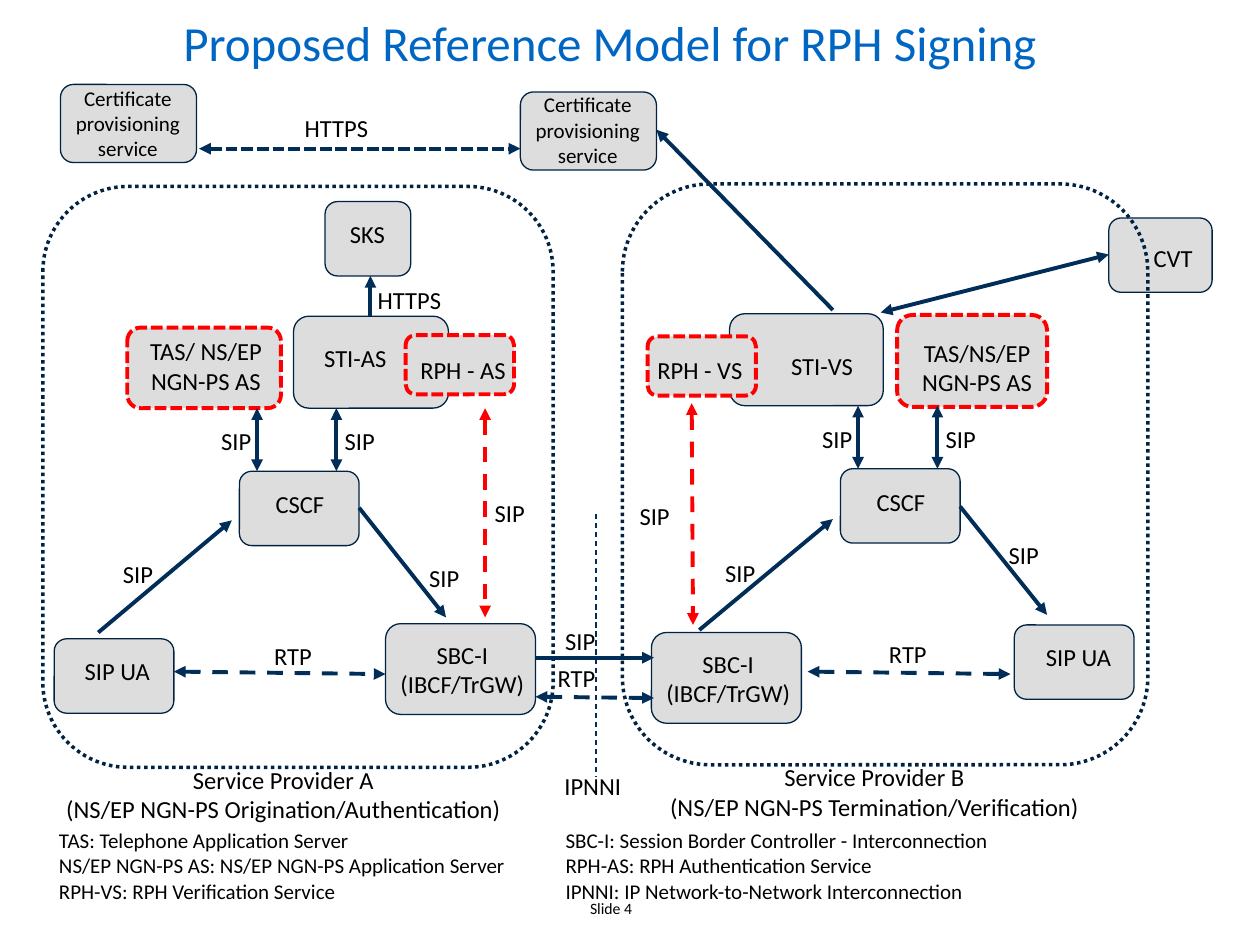
from lxml.etree import SubElement
from pptx import Presentation
from pptx.dml.color import RGBColor
from pptx.enum.dml import MSO_LINE
from pptx.enum.shapes import MSO_CONNECTOR, MSO_SHAPE
from pptx.enum.text import MSO_ANCHOR, PP_ALIGN
from pptx.oxml.ns import qn
from pptx.util import Inches, Pt

HUES = {"title": "0066C3", "text": "000000", "box": "DDDDDD",
        "edge": "002343", "link": "002E58", "new": "FF0000"}
DASH, DOT, SQUARE = MSO_LINE.DASH, MSO_LINE.ROUND_DOT, MSO_LINE.SQUARE_DOT

deck = Presentation()
deck.slide_width, deck.slide_height = Inches(10), Inches(7.5)
COL, ROW = deck.slide_width / 100, deck.slide_height / 75
slide = deck.slides.add_slide(deck.slide_layouts[6])
shapes = slide.shapes


def write(text, x, y, wide, high=3.4, size=14, hue="text",
          align=PP_ALIGN.CENTER, anchor=MSO_ANCHOR.TOP, tab=None):
    """Add a text box on the grid; tab is a stop in columns."""
    area = shapes.add_textbox(int(x * COL), int(y * ROW),
                              int(wide * COL), int(high * ROW))
    frame = area.text_frame
    frame.word_wrap = True
    frame.vertical_anchor = anchor
    frame.text = text
    for para in frame.paragraphs:
        para.alignment = align
        for run in para.runs:
            run.font.name = "Calibri"
            run.font.size = Pt(size)
            run.font.color.rgb = RGBColor.from_string(HUES[hue])
        if tab:
            stops = SubElement(para._p.get_or_add_pPr(), qn("a:tabLst"))
            SubElement(stops, qn("a:tab"), pos=str(int(tab * COL)), algn="l")


def stroke(line, hue, width, dash=None):
    line.color.rgb = RGBColor.from_string(HUES[hue])
    line.width = Pt(width)
    if dash:
        line.dash_style = dash


# Boxes: left, top, width, height, style; later ones lie on top
STYLES = {"plain": ("edge", 0.75, None), "new": ("new", 2.25, SQUARE),
          "zone": ("edge", 2, DOT)}
boxes = [
    (19, 37.4, 9.5, 5.9, "plain"),        # CSCF, provider A
    (4.3, 50.7, 9.5, 5.9, "plain"),       # SIP UA
    (30.6, 49.5, 11.9, 7.2, "plain"),     # SBC-I
    (10.1, 26, 12.2, 6.4, "new"),         # TAS
    (23.3, 25.1, 12.3, 7.3, "plain"),     # STI-AS
    (32.2, 26.6, 8.6, 4.7, "new"),        # RPH-AS
    (25.8, 16, 6.8, 5.9, "plain"),        # SKS
    (3.4, 14.8, 40.5, 46.1, "zone"),
    (66.7, 37.2, 9.5, 5.9, "plain"),      # CSCF, provider B
    (80.5, 49.6, 9.5, 5.9, "plain"),      # SIP UA
    (51.7, 50.2, 11.9, 7.2, "plain"),     # SBC-I
    (57.9, 24.9, 12.2, 7.3, "plain"),     # STI-VS
    (71.2, 25, 11.9, 7.3, "new"),         # TAS
    (88, 17.3, 8.2, 5.9, "plain"),        # CVT
    (49.4, 14.6, 41.7, 46.1, "zone"),
    (51.4, 26.7, 8.6, 4.7, "new"),        # RPH-VS
    (4.8, 6.7, 10.8, 6.2, "plain"),       # certificate services
    (41.3, 7.3, 10.8, 6.2, "plain"),
]
for x, y, wide, high, style in boxes:
    box = shapes.add_shape(MSO_SHAPE.ROUNDED_RECTANGLE, int(x * COL), int(y * ROW),
                           int(wide * COL), int(high * ROW))
    box.shadow.inherit = False
    if style == "zone":
        box.fill.background()
    else:
        box.fill.solid()
        box.fill.fore_color.rgb = RGBColor.from_string(HUES["box"])
    stroke(box.line, *STYLES[style])

# Links: from x, y, to x, y, number of arrowheads, dash, hue, width
BLUE, RED, THIN = ("link", 2.25), ("new", 2.25), ("link", 0.75)
links = [
    (13.8, 53.3, 30.6, 53.5, 2, DASH, BLUE),
    (7.8, 50.2, 18.4, 41.3, 1, None, BLUE),
    (28.5, 40.3, 35.4, 49, 1, None, BLUE),
    (20.4, 32.4, 20.4, 37.4, 2, None, BLUE),
    (26.7, 32.4, 26.7, 37.4, 2, None, BLUE),
    (29.4, 25.1, 29.4, 21.9, 1, None, BLUE),
    (38.5, 32.4, 38.5, 49, 2, DASH, RED),
    (64.1, 53.3, 80.2, 53.5, 2, DASH, BLUE),
    (55.5, 50, 66.1, 41.2, 1, None, BLUE),
    (76.2, 40.2, 83.1, 48.8, 1, None, BLUE),
    (68.1, 32.2, 68.1, 37.2, 2, None, BLUE),
    (74.4, 32.2, 74.4, 37.2, 2, None, BLUE),
    (54.9, 32, 55, 49.6, 2, DASH, RED),
    (42.5, 55.3, 51.9, 55.4, 2, DASH, BLUE),
    (42.5, 52.2, 51.9, 52.2, 1, None, BLUE),
    (69.9, 24.8, 88, 20.2, 2, None, BLUE),
    (15.8, 11.8, 41.3, 11.8, 2, SQUARE, BLUE),
    (66.1, 24.6, 52.1, 10.3, 1, None, BLUE),
    (47.3, 40.8, 47.3, 61.7, 0, DASH, THIN),
]
for x, y, endx, endy, heads, dash, (hue, width) in links:
    link = shapes.add_connector(MSO_CONNECTOR.STRAIGHT, int(x * COL), int(y * ROW),
                                int(endx * COL), int(endy * ROW))
    stroke(link.line, hue, width, dash)
    for end in ("a:headEnd", "a:tailEnd")[2 - heads:]:
        SubElement(link.line._get_or_add_ln(), qn(end), type="triangle")
    SubElement(link._element.spPr, qn("a:effectLst"))

# Names on the boxes: text, left, top, width
names = [
    ("CSCF", 19.7, 38.3, 8.2), ("CSCF", 67.4, 38.2, 8.2),
    ("SIP UA", 4.9, 51.6, 8.8), ("SIP UA", 81.2, 50.5, 8.8),
    ("SBC-I\n(IBCF/TrGW)", 28, 50.3, 17.4), ("SBC-I\n(IBCF/TrGW)", 49.1, 51, 17.4),
    ("TAS/ NS/EP NGN-PS AS", 9.3, 26.2, 14.1), ("TAS/NS/EP NGN-PS AS", 72, 26.3, 11.1),
    ("STI-AS", 20.8, 26.7, 14.8), ("STI-VS", 58.1, 27.4, 14.3),
    ("RPH - AS", 31.6, 27.7, 10.3), ("RPH - VS", 50.4, 27.7, 10.3),
    ("SKS", 26.2, 16.9, 5.9), ("CVT", 89.9, 18.8, 6.4),
    ("Service Provider A\n(NS/EP NGN-PS Origination/Authentication)", 3.1, 60.2, 38.8),
    ("Service Provider B\n(NS/EP NGN-PS Termination/Verification)", 50, 60, 38.8),
    ("IPNNI", 42.1, 60.7, 9.9),
]
for text, x, y, wide in names:
    write(text, x, y, wide, 5.7 if len(text) > 8 else 3.4)

for x, y in [(3.1, 6.3), (39.6, 6.8)]:
    write("Certificate provisioning service", x, y, 14.1, 7.1, size=12)

# Protocol names beside the links: width, spots
marks = {
    "SIP": (5.9, [(8, 43.9), (43.1, 49.2), (25.6, 33.3), (15.8, 33.3), (37.5, 39),
                  (55.8, 43.8), (78.3, 42.4), (73.3, 33.2), (63.5, 33.2), (49, 39.3),
                  (32.3, 44.2)]),
    "RTP": (5.9, [(42.8, 52.1), (69.1, 50.2), (20.3, 50.4)]),
    "HTTPS": (8.6, [(28.2, 22.1), (22.4, 8.5)]),
}
for text, (wide, spots) in marks.items():
    for x, y in spots:
        write(text, x, y, wide)

write("Proposed Reference Model for RPH Signing", 3.4, 0.8, 90, 5.1,
      size=28, hue="title", anchor=MSO_ANCHOR.MIDDLE)
terms = [
    ("TAS: Telephone Application Server",
     "SBC-I: Session Border Controller - Interconnection"),
    ("NS/EP NGN-PS AS: NS/EP NGN-PS Application Server",
     "RPH-AS: RPH Authentication Service"),
    ("RPH-VS: RPH Verification Service",
     "IPNNI: IP Network-to-Network Interconnection"),
]
write("\n".join("\t".join(pair) for pair in terms), 3.7, 65.2, 89.3, 7.1,
      size=12, align=PP_ALIGN.LEFT, tab=40.2)
write("Slide 4", 38.5, 70.8, 20, 2.5, size=9)

deck.save("out.pptx")
